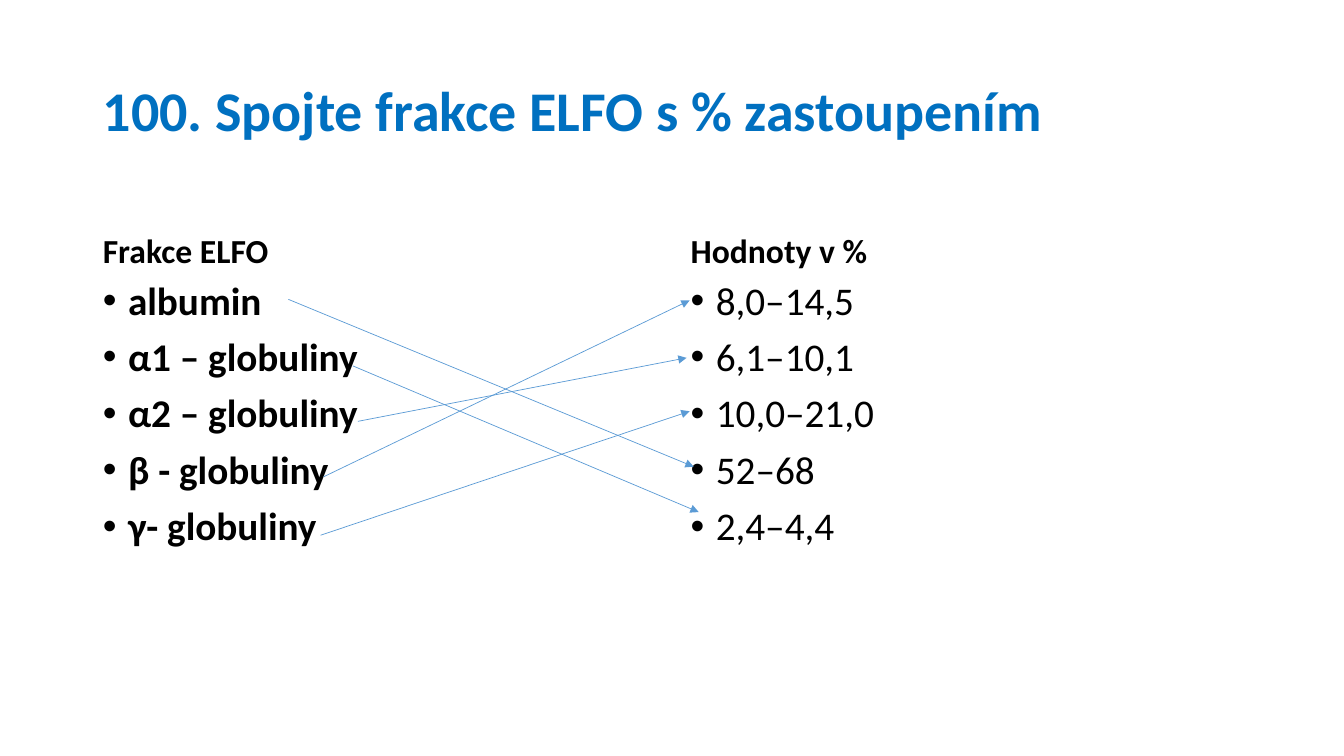
import pptx
import pptx.dml.color
import pptx.enum.dml
import pptx.enum.shapes
import pptx.enum.text
import pptx.oxml.ns
import pptx.util
from lxml import etree

Inches, Pt = pptx.util.Inches, pptx.util.Pt
RGBColor = pptx.dml.color.RGBColor
ANCHOR = pptx.enum.text.MSO_ANCHOR

TITLE_BLUE = RGBColor(0x00, 0x70, 0xC0)
ARROW_BLUE = RGBColor(0x5B, 0x9B, 0xD5)
BLACK = RGBColor(0x00, 0x00, 0x00)

TITLE = "100. Spojte frakce ELFO s % zastoupením"
# left, width, heading, items, bold items
COLUMNS = [
    (0.92, 5.64, "Frakce ELFO",
     ["albumin", "α1 – globuliny", "α2 – globuliny", "β - globuliny", "γ- globuliny"], True),
    (6.75, 5.67, "Hodnoty v %",
     ["8,0–14,5", "6,1–10,1", "10,0–21,0", "52–68", "2,4–4,4"], False),
]
# from each fraction to its value
MATCHES = [
    ((2.86, 2.97), (6.88, 4.63)),
    ((3.5, 3.63), (6.93, 5.08)),
    ((3.55, 4.18), (6.81, 3.55)),
    ((3.21, 4.73), (6.84, 2.98)),
    ((3.18, 5.31), (6.84, 4.08)),
]
HEADING_TOP, HEADING_HEIGHT, LIST_HEIGHT = 1.84, 0.9, 4.03
INDENT = 0.25


def add_bullet(paragraph):
    properties = paragraph._p.get_or_add_pPr()
    properties.set("marL", str(Inches(INDENT)))
    properties.set("indent", str(Inches(-INDENT)))
    font = etree.SubElement(properties, pptx.oxml.ns.qn("a:buFont"))
    font.set("typeface", "Arial")
    bullet = etree.SubElement(properties, pptx.oxml.ns.qn("a:buChar"))
    bullet.set("char", "•")


def fill_placeholder(placeholder, lines, box, size, color=BLACK, bold=True,
                     anchor=ANCHOR.TOP, before=10, bulleted=False):
    placeholder.left, placeholder.top, placeholder.width, placeholder.height = map(Inches, box)
    frame = placeholder.text_frame
    frame.text = "\n".join(lines)
    frame.word_wrap = True
    frame.auto_size = pptx.enum.text.MSO_AUTO_SIZE.NONE
    frame.vertical_anchor = anchor
    for paragraph in frame.paragraphs:
        paragraph.alignment = pptx.enum.text.PP_ALIGN.LEFT
        paragraph.line_spacing = 0.9
        paragraph.space_before = Pt(before)
        if bulleted:
            add_bullet(paragraph)
        font = paragraph.runs[0].font
        font.name, font.size, font.bold = "Calibri", Pt(size), bold
        font.color.rgb = color


def add_arrow(slide, start, end):
    arrow = slide.shapes.add_connector(
        pptx.enum.shapes.MSO_CONNECTOR.STRAIGHT, *map(Inches, start + end))
    arrow.line.color.rgb = ARROW_BLUE
    arrow.line.width = Pt(0.5)
    head = etree.SubElement(arrow.line._get_or_add_ln(), pptx.oxml.ns.qn("a:tailEnd"))
    head.set("type", "triangle")
    etree.SubElement(arrow._element.spPr, pptx.oxml.ns.qn("a:effectLst"))


def main():
    deck = pptx.Presentation()
    deck.slide_width, deck.slide_height = Inches(13.33), Inches(7.5)
    slide = deck.slides.add_slide(deck.slide_layouts.get_by_name("Comparison"))
    title, *bodies = slide.placeholders

    fill_placeholder(title, [TITLE], (0.92, 0.4, 11.5, 1.45), 40, color=TITLE_BLUE,
                     anchor=ANCHOR.MIDDLE, before=0)
    list_top = HEADING_TOP + HEADING_HEIGHT
    for (left, width, heading, items, bold), heading_body, list_body in zip(
            COLUMNS, bodies[::2], bodies[1::2]):
        fill_placeholder(heading_body, [heading], (left, HEADING_TOP, width, HEADING_HEIGHT),
                         24, anchor=ANCHOR.BOTTOM)
        fill_placeholder(list_body, items, (left, list_top, width, LIST_HEIGHT),
                         28, bold=bold, bulleted=True)
    for start, end in MATCHES:
        add_arrow(slide, start, end)
    deck.save("out.pptx")


if __name__ == "__main__":
    main()
